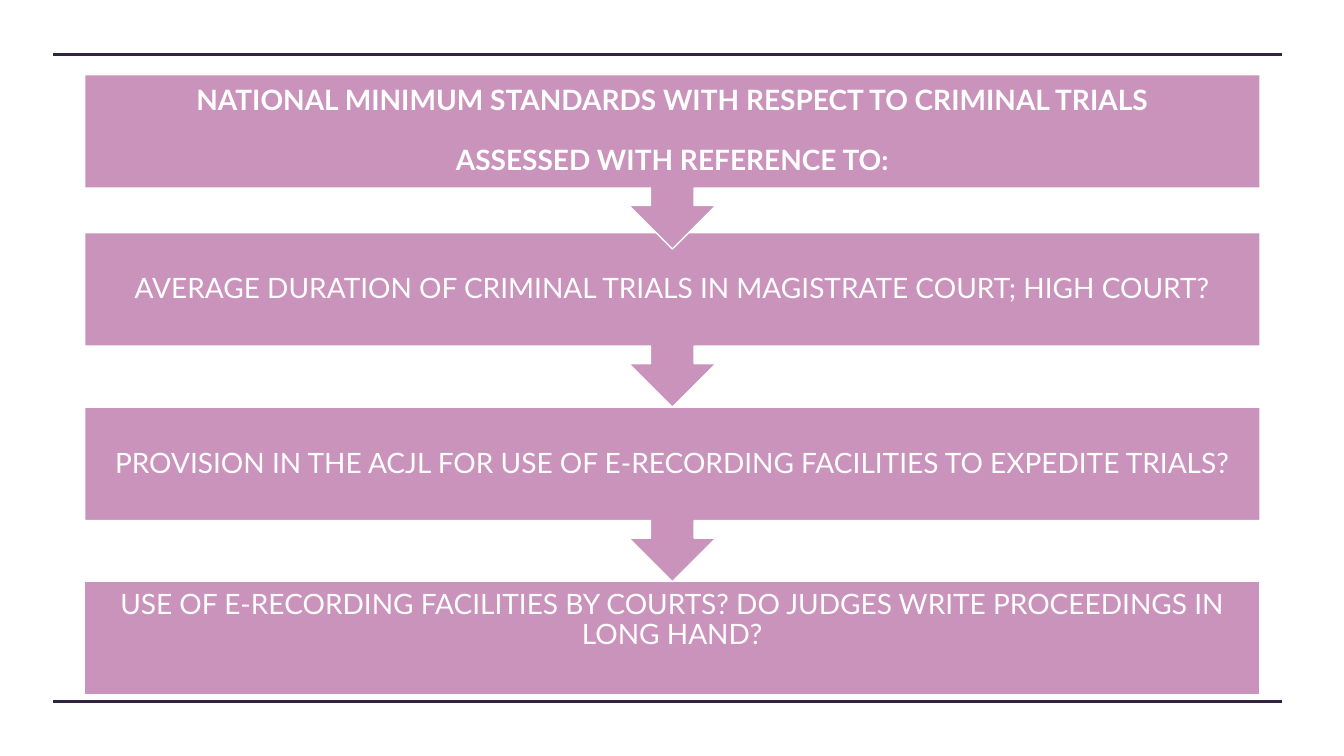
from lxml.etree import SubElement
from pptx import Presentation
from pptx.dml.color import RGBColor
from pptx.enum.shapes import MSO_CONNECTOR, MSO_SHAPE
from pptx.enum.text import MSO_ANCHOR, MSO_AUTO_SIZE, PP_ALIGN
from pptx.oxml.ns import qn
from pptx.util import Pt

# Content: one step per box, top to bottom, as (top, paragraphs)
STEPS = [
    (53.3, ["NATIONAL MINIMUM STANDARDS WITH RESPECT TO CRIMINAL TRIALS",
            "ASSESSED WITH REFERENCE TO:"]),
    (166.3, ["AVERAGE DURATION OF CRIMINAL TRIALS IN MAGISTRATE COURT; HIGH COURT?"]),
    (290.9, ["PROVISION IN THE ACJL FOR USE OF E-RECORDING FACILITIES TO EXPEDITE TRIALS?"]),
    (414.9, ["USE OF E-RECORDING FACILITIES BY COURTS? "
             "DO JUDGES WRITE PROCEEDINGS IN LONG HAND?"]),
]

# Layout and style
SLIDE_WIDTH, SLIDE_HEIGHT = 960, 540
BOX_LEFT, BOX_WIDTH, BOX_HEIGHT = 60.5, 839.5, 81
CALLOUT_HEIGHT = 124.6
RULE_LEFT, RULE_RIGHT = 38.2, 915.8
RULE_TOPS = (38.9, 501.1)
SIDE_INSET = 11.5
LAST_BOTTOM_INSET = 24
PARAGRAPH_GAP = 21.6
FONT, FONT_SIZE = "Lato", 20
PINK, WHITE, PURPLE = "CA93BB", "FFFFFF", "312441"


def color(value):
    return RGBColor.from_string(value)


def add_rule(slide, top):
    rule = slide.shapes.add_connector(
        MSO_CONNECTOR.STRAIGHT, Pt(RULE_LEFT), Pt(top), Pt(RULE_RIGHT), Pt(top))
    rule.line.color.rgb = color(PURPLE)
    rule.line.width = Pt(2.25)
    SubElement(rule.element.spPr, qn("a:effectLst"))


def add_box(slide, kind, top, height, rotation):
    box = slide.shapes.add_shape(kind, Pt(BOX_LEFT), Pt(top), Pt(BOX_WIDTH), Pt(height))
    box.rotation = rotation
    box.shadow.inherit = False
    box.fill.solid()
    box.fill.fore_color.rgb = color(PINK)
    box.line.color.rgb = color(WHITE)
    box.line.width = Pt(1)


def write_label(shape, top, lines, bold, bottom_inset):
    shape.left, shape.top = Pt(BOX_LEFT), Pt(top)
    shape.width, shape.height = Pt(BOX_WIDTH), Pt(BOX_HEIGHT)
    frame = shape.text_frame
    frame.word_wrap = True
    frame.auto_size = MSO_AUTO_SIZE.NONE
    frame.vertical_anchor = MSO_ANCHOR.MIDDLE
    frame.margin_left = frame.margin_right = Pt(SIDE_INSET)
    frame.margin_top, frame.margin_bottom = Pt(0), Pt(bottom_inset)
    for index, line in enumerate(lines):
        paragraph = frame.add_paragraph() if index else frame.paragraphs[0]
        paragraph.alignment = PP_ALIGN.CENTER
        paragraph.line_spacing = 0.9
        paragraph.space_before = Pt(PARAGRAPH_GAP if index else 0)
        run = paragraph.add_run()
        run.text = line
        run.font.name = FONT
        run.font.size = Pt(FONT_SIZE)
        run.font.bold = bold
        run.font.color.rgb = color(WHITE)


def main():
    presentation = Presentation()
    presentation.slide_width, presentation.slide_height = Pt(SLIDE_WIDTH), Pt(SLIDE_HEIGHT)
    slide = presentation.slides.add_slide(presentation.slide_layouts[5])
    title = slide.shapes.title

    # Rules above and below the flow
    for top in RULE_TOPS:
        add_rule(slide, top)

    # Steps from the bottom up, so each arrow lies over the next box
    last = len(STEPS) - 1
    for index in range(last, -1, -1):
        top, lines = STEPS[index]
        if index == last:
            add_box(slide, MSO_SHAPE.RECTANGLE, top, BOX_HEIGHT, 0)
        else:
            add_box(slide, MSO_SHAPE.UP_ARROW_CALLOUT, top, CALLOUT_HEIGHT, 180)
        if index == 0:
            # The heading is the title, brought in front of its box
            slide.shapes[-1].element.addnext(title.element)
            label = title
        else:
            label = slide.shapes.add_textbox(0, 0, 0, 0)
        write_label(label, top, lines, index == 0,
                    LAST_BOTTOM_INSET if index == last else 0)

    presentation.save("out.pptx")


if __name__ == "__main__":
    main()
